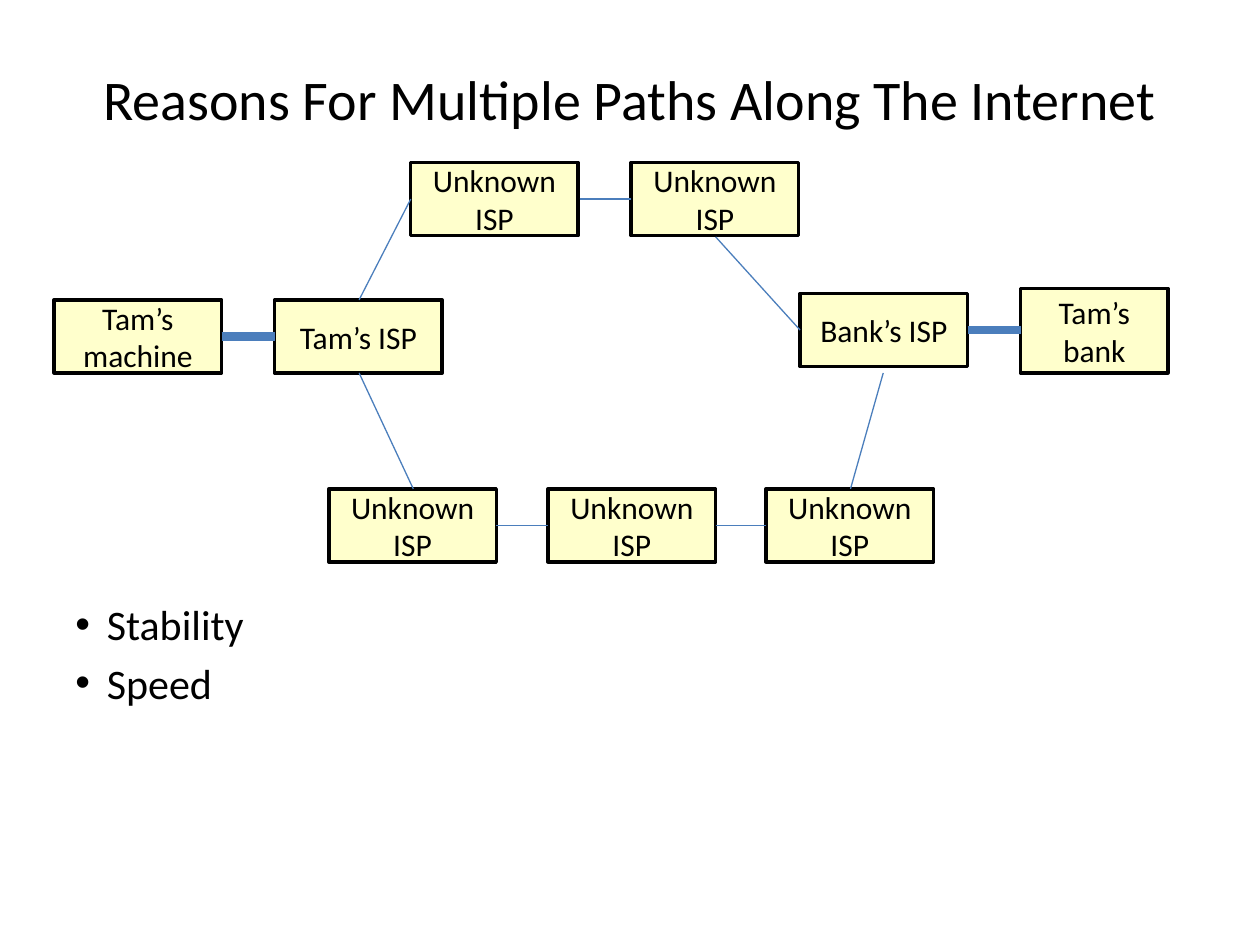
from pptx import Presentation
from pptx.dml.color import RGBColor
from pptx.enum.shapes import MSO_CONNECTOR as LINE, MSO_SHAPE as SHAPE
from pptx.enum.text import MSO_ANCHOR as ANCHOR, PP_ALIGN as ALIGN
from pptx.oxml.ns import qn
from pptx.util import Inches, Pt
from lxml.etree import SubElement

BLACK = RGBColor(0, 0, 0)
CREAM = RGBColor(0xFF, 0xFF, 0xCC)
BLUE = RGBColor(0x4B, 0x7E, 0xBC)
WIDE, HIGH = 1.33, 0.58
THIN, THICK = 0.75, 5


def style(para, size):
    para.font.name = "Calibri"
    para.font.size = Pt(size)
    para.font.color.rgb = BLACK


deck = Presentation()
deck.slide_width, deck.slide_height = Inches(10), Inches(7.5)
slide = deck.slides.add_slide(deck.slide_layouts[5])
shapes = slide.shapes

# Title
title = shapes.title
title.left, title.top = Inches(0.5), Inches(0.3)
title.width, title.height = Inches(9), Inches(0.95)
title.text_frame.text = "Reasons For Multiple Paths Along The Internet"
title.text_frame.vertical_anchor = ANCHOR.MIDDLE
title.text_frame.paragraphs[0].alignment = ALIGN.CENTER
style(title.text_frame.paragraphs[0], 32)

# Reasons
body = shapes.add_textbox(Inches(0.5), Inches(4.7), Inches(9), Inches(2.3))
frame = body.text_frame
frame.word_wrap = True
frame.text = "Stability\nSpeed"
for para in frame.paragraphs:
    style(para, 24)
    para.space_after = Pt(4.8)
    props = para._p.get_or_add_pPr()
    props.set("marL", str(Inches(0.25)))
    props.set("indent", str(Inches(-0.25)))
    SubElement(props, qn("a:buFont")).set("typeface", "Arial")
    SubElement(props, qn("a:buChar")).set("char", "•")

# Machines and providers: text, left, top, width, height
nodes = [
    ("Tam’s machine", 0.43, 2.38, WIDE, HIGH),
    ("Tam’s ISP", 2.18, 2.38, WIDE, HIGH),
    ("Bank’s ISP", 6.35, 2.33, WIDE, HIGH),
    ("Tam’s bank", 8.1, 2.29, 1.17, 0.67),
]
nodes += [("Unknown ISP", x, 1.29, WIDE, HIGH) for x in (3.26, 5.01)]
nodes += [("Unknown ISP", x, 3.88, WIDE, HIGH) for x in (2.61, 4.35, 6.08)]
for text, *place in nodes:
    box = shapes.add_shape(SHAPE.RECTANGLE, *map(Inches, place))
    box.shadow.inherit = False
    box.fill.solid()
    box.fill.fore_color.rgb = CREAM
    box.line.color.rgb = BLACK
    box.line.width = Pt(2)
    frame = box.text_frame
    frame.word_wrap = True
    frame.vertical_anchor = ANCHOR.MIDDLE
    frame.text = text
    frame.paragraphs[0].alignment = ALIGN.CENTER
    style(frame.paragraphs[0], 18)

# Links: start x, start y, end x, end y, width
links = [
    # To the end users
    (1.76, 2.67, 2.18, 2.67, THICK),
    (7.68, 2.62, 8.1, 2.62, THICK),
    # Upper path
    (2.85, 2.38, 3.26, 1.58, THIN),
    (4.6, 1.58, 5.01, 1.58, THIN),
    (5.68, 1.88, 6.35, 2.62, THIN),
    # Lower path
    (2.85, 2.96, 3.28, 3.88, THIN),
    (3.94, 4.17, 4.35, 4.17, THIN),
    (5.68, 4.17, 6.08, 4.17, THIN),
    (6.75, 3.88, 7.01, 2.96, THIN),
]
for *ends, width in links:
    link = shapes.add_connector(LINE.STRAIGHT, *map(Inches, ends))
    link.line.color.rgb = BLUE
    link.line.width = Pt(width)
    SubElement(link._element.spPr, qn("a:effectLst"))

deck.save("out.pptx")
